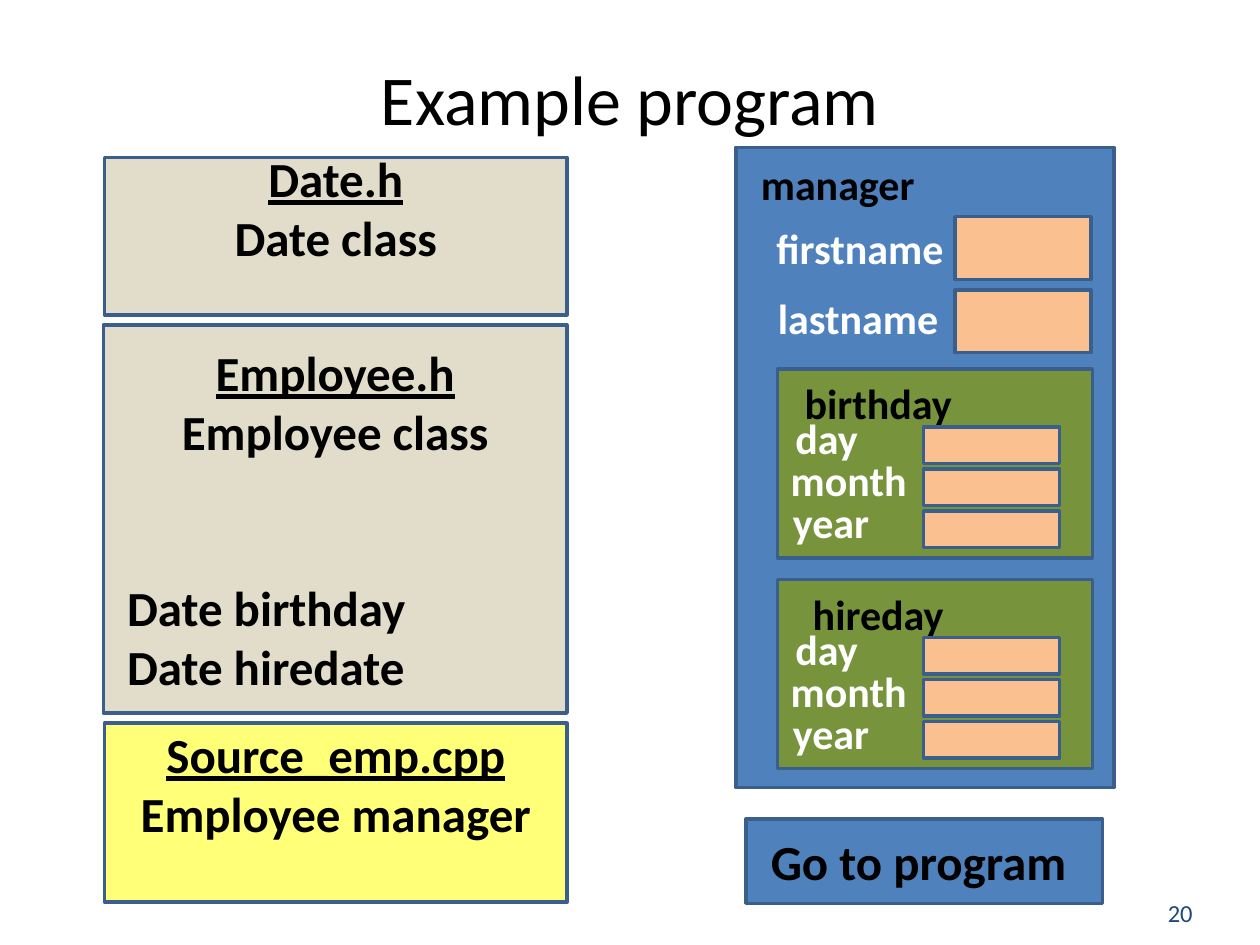
from lxml import etree
from pptx import Presentation
from pptx.dml.color import RGBColor
from pptx.enum.shapes import MSO_SHAPE as Shape
from pptx.enum.text import MSO_ANCHOR as Anchor, PP_ALIGN as Align
from pptx.oxml.ns import qn
from pptx.util import Inches, Pt

COLORS = {
    "black": "000000", "white": "FFFFFF", "outline": "3A5F8C",
    "header": "C4BD97", "source": "FFFF00", "object": "4F81BD",
    "date": "77933C", "field": "FAC090", "number": "1F497D",
}


class SlideBuilder:
    font_name = "Calibri"

    def __init__(self, page):
        self.page = page
        self.shapes = page.shapes

    def start_group(self):
        self.shapes = self.page.shapes.add_group_shape().shapes

    def end_group(self):
        self.shapes = self.page.shapes

    def color(self, name):
        return RGBColor.from_string(COLORS[name])

    def style(self, para, size, color, bold=True, align=Align.CENTER):
        para.alignment = align
        for span in para.runs:
            span.font.name = self.font_name
            span.font.size = Pt(size)
            span.font.bold = bold
            span.font.color.rgb = self.color(color)

    def title(self, text, left, top, width, height):
        box = self.page.shapes.title
        box.left, box.top = Inches(left), Inches(top)
        box.width, box.height = Inches(width), Inches(height)
        box.text_frame.text = text
        box.text_frame.vertical_anchor = Anchor.MIDDLE
        self.style(box.text_frame.paragraphs[0], 40, "black", bold=False)

    def panel(self, left, top, width, height, fill, opacity=None, outlined=True):
        box = self.shapes.add_shape(
            Shape.RECTANGLE, Inches(left), Inches(top), Inches(width), Inches(height))
        box.shadow.inherit = False
        box.fill.solid()
        box.fill.fore_color.rgb = self.color(fill)
        if opacity is not None:
            solid = box._element.spPr.find(qn("a:solidFill"))
            alpha = etree.SubElement(solid.find(qn("a:srgbClr")), qn("a:alpha"))
            alpha.set("val", str(opacity * 1000))
        if outlined:
            box.line.color.rgb = self.color("outline")
            box.line.width = Pt(2)
        else:
            box.line.fill.background()
        return box

    def set_text(self, box, text, size, color, bold=True, align=Align.CENTER):
        frame = box.text_frame
        frame.word_wrap = True
        frame.vertical_anchor = Anchor.MIDDLE
        frame.margin_top = frame.margin_bottom = 0
        frame.text = text
        self.style(frame.paragraphs[0], size, color, bold, align)

    def label(self, text, left, top, width, height, size=24, color="white",
              bold=True, align=Align.CENTER):
        box = self.shapes.add_textbox(
            Inches(left), Inches(top), Inches(width), Inches(height))
        self.set_text(box, text, size, color, bold, align)

    def plate(self, text, left, top, width, height, fill, color="black",
              align=Align.CENTER):
        box = self.panel(left, top, width, height, fill, outlined=False)
        self.set_text(box, text, 24, color, align=align)

    def file_box(self, left, top, width, height, fill, opacity, inset,
                 name, content, members=()):
        box = self.panel(left, top, width, height, fill, opacity)
        frame = box.text_frame
        frame.word_wrap = True
        frame.vertical_anchor = Anchor.TOP
        frame.margin_top = Inches(inset)
        frame.margin_bottom = 0
        frame.text = "\n".join([name, content, *members])
        heading, summary, *member_paras = frame.paragraphs
        self.style(heading, 28, "black")
        heading.runs[0].font.underline = True
        self.style(summary, 28, "black")
        for para in member_paras:
            self.style(para, 28, "black", align=Align.LEFT)
            para._p.get_or_add_pPr().set("marL", str(Inches(0.09)))
        if member_paras:
            member_paras[0].space_before = Pt(67)

    def date_object(self, name, top):
        self.start_group()
        self.panel(6.17, top, 2.5, 1.5, "date")
        self.plate(name, 6.24, top + 0.02, 1.46, 0.5, "date")
        parts = [("day", 6.15, 0.82), ("month", 6.14, 1.19), ("year", 6, 1.19)]
        for row, (part, left, width) in enumerate(parts):
            offset = top + row / 3
            self.label(part, left, offset + 0.42, width, 0.25)
            self.panel(7.33, offset + 0.46, 1.08, 0.29, "field")
        self.end_group()


def main():
    deck = Presentation()
    deck.slide_width, deck.slide_height = Inches(10), Inches(7.5)
    builder = SlideBuilder(deck.slides.add_slide(deck.slide_layouts[5]))

    builder.title("Example program", 0.5, 0.38, 9, 0.78)
    builder.label("20", 9.17, 7.08, 0.67, 0.33, 14, "number", False, Align.LEFT)

    builder.file_box(0.83, 1.25, 3.67, 1.25, "header", 50, -0.07,
                     "Date.h", "Date class")
    builder.file_box(0.82, 2.58, 3.68, 3.08, "header", 50, 0.14,
                     "Employee.h", "Employee class",
                     ["Date birthday", "Date hiredate"])
    builder.file_box(0.83, 5.74, 3.67, 1.42, "source", 53, 0.01,
                     "Source_emp.cpp", "Employee manager")

    button = builder.panel(5.92, 6.5, 2.83, 0.67, "object")
    builder.set_text(button, "Go to program", 28, "black")
    button.text_frame.margin_right = Inches(0.19)

    builder.start_group()
    builder.panel(5.84, 1.17, 3, 5.08, "object")
    builder.label("firstname", 5.98, 1.72, 1.69, 0.5)
    builder.plate("lastname", 6.04, 2.27, 1.54, 0.5, "object", "white")
    builder.plate("manager", 5.94, 1.27, 1.72, 0.37, "object", align=Align.LEFT)
    for top in (1.72, 2.3):
        builder.panel(7.58, top, 1.08, 0.5, "field")
    builder.end_group()

    for name, top in (("birthday", 2.93), ("hireday", 4.6)):
        builder.date_object(name, top)

    deck.save("out.pptx")


if __name__ == "__main__":
    main()
